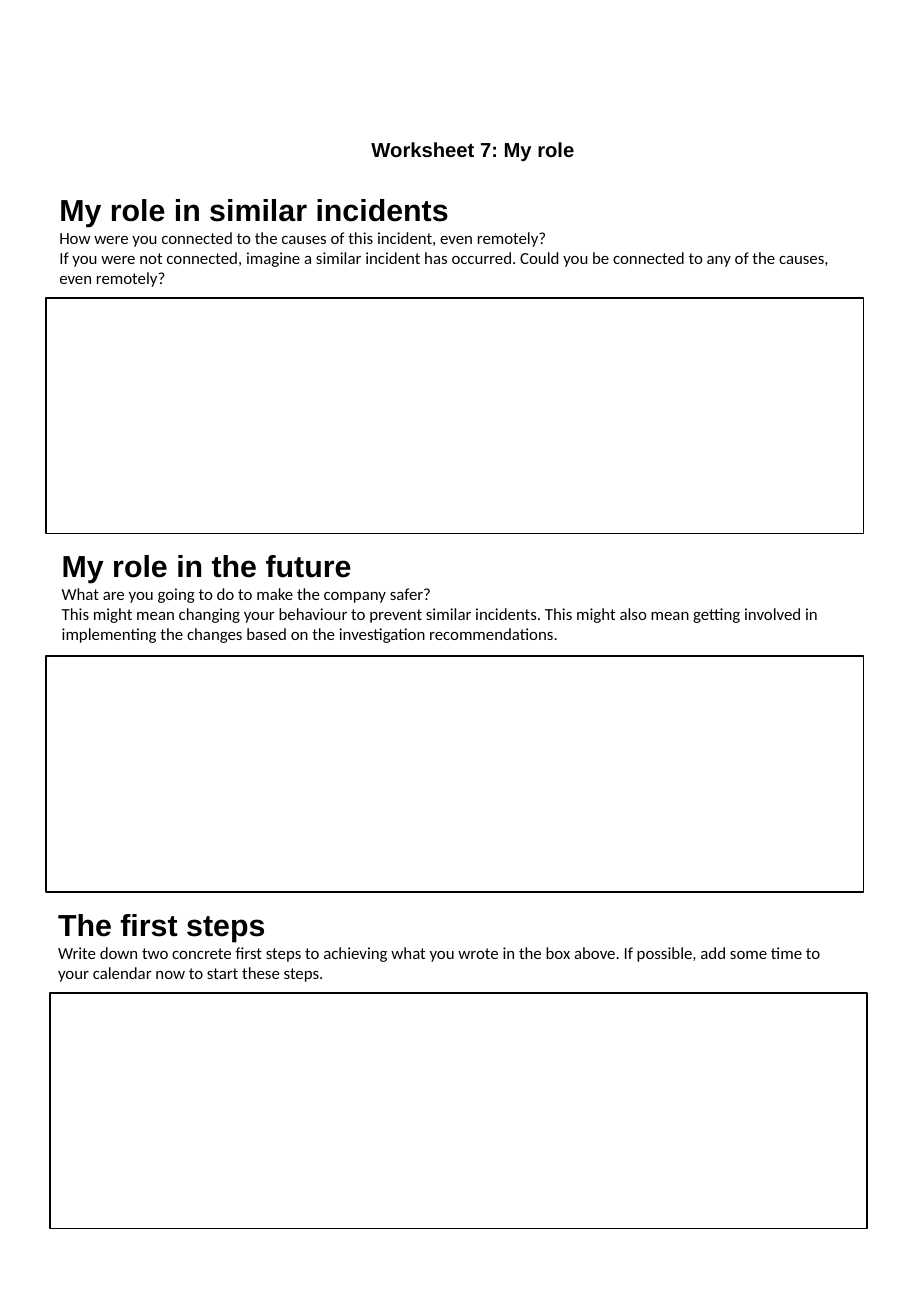
from pptx import Presentation
from pptx import util as u
from pptx.dml import color
from pptx.enum import shapes, text

WIDTH = 6.73
ANSWER_HEIGHT = 1.94
TITLE = {"name": "Arial", "size": u.Pt(12), "bold": True}
HEADING = {"name": "Arial", "size": u.Pt(18), "bold": True}
PROMPT = {"name": "Calibri", "size": u.Pt(10), "bold": False}

SECTIONS = [
    {
        "text_at": (0.39, 1.52, 0.91),
        "answer_at": (0.38, 2.45),
        "heading": "My role in similar incidents",
        "prompts": [
            "How were you connected to the causes of this incident, even remotely?",
            "If you were not connected, imagine a similar incident has occurred. "
            "Could you be connected to any of the causes, even remotely?",
        ],
    },
    {
        "text_at": (0.41, 4.45, 0.91),
        "answer_at": (0.38, 5.4),
        "heading": "My role in the future",
        "prompts": [
            "What are you going to do to make the company safer?",
            "This might mean changing your behaviour to prevent similar incidents. "
            "This might also mean getting involved in implementing the changes "
            "based on the investigation recommendations.",
        ],
    },
    {
        "text_at": (0.38, 7.41, 0.74),
        "answer_at": (0.41, 8.17),
        "heading": "The first steps",
        "prompts": [
            "Write down two concrete first steps to achieving what you wrote in "
            "the box above. If possible, add some time to your calendar now to "
            "start these steps.",
        ],
    },
]


def paint(target, value):
    target.rgb = color.RGBColor.from_string(value)


def write(para, words, style):
    span = para.add_run()
    span.text = words
    for name, value in style.items():
        setattr(span.font, name, value)
    paint(span.font.color, "000000")


deck = Presentation()
deck.slide_width = u.Inches(7.5)
deck.slide_height = u.Inches(10.83)
page = deck.slides.add_slide(deck.slide_layouts[5])

title = page.shapes.title
title.left, title.top = u.Inches(0.53), u.Inches(1.08)
title.width, title.height = u.Inches(WIDTH), u.Inches(0.3)
title.text_frame.auto_size = text.MSO_AUTO_SIZE.SHAPE_TO_FIT_TEXT
title.text_frame.vertical_anchor = text.MSO_ANCHOR.TOP
title_para = title.text_frame.paragraphs[0]
title_para.alignment = text.PP_ALIGN.CENTER
write(title_para, "Worksheet 7: My role", TITLE)

for section in SECTIONS:
    left, top, height = section["text_at"]
    box = page.shapes.add_textbox(
        u.Inches(left), u.Inches(top), u.Inches(WIDTH), u.Inches(height)
    )
    frame = box.text_frame
    frame.word_wrap = True
    frame.auto_size = text.MSO_AUTO_SIZE.SHAPE_TO_FIT_TEXT
    write(frame.paragraphs[0], section["heading"], HEADING)
    for prompt in section["prompts"]:
        write(frame.add_paragraph(), prompt, PROMPT)

    left, top = section["answer_at"]
    answer = page.shapes.add_shape(
        shapes.MSO_SHAPE.RECTANGLE,
        u.Inches(left), u.Inches(top), u.Inches(WIDTH), u.Inches(ANSWER_HEIGHT),
    )
    answer.shadow.inherit = False
    answer.fill.solid()
    paint(answer.fill.fore_color, "FFFFFF")
    paint(answer.line.color, "000000")
    answer.line.width = u.Pt(1)

deck.save("out.pptx")
